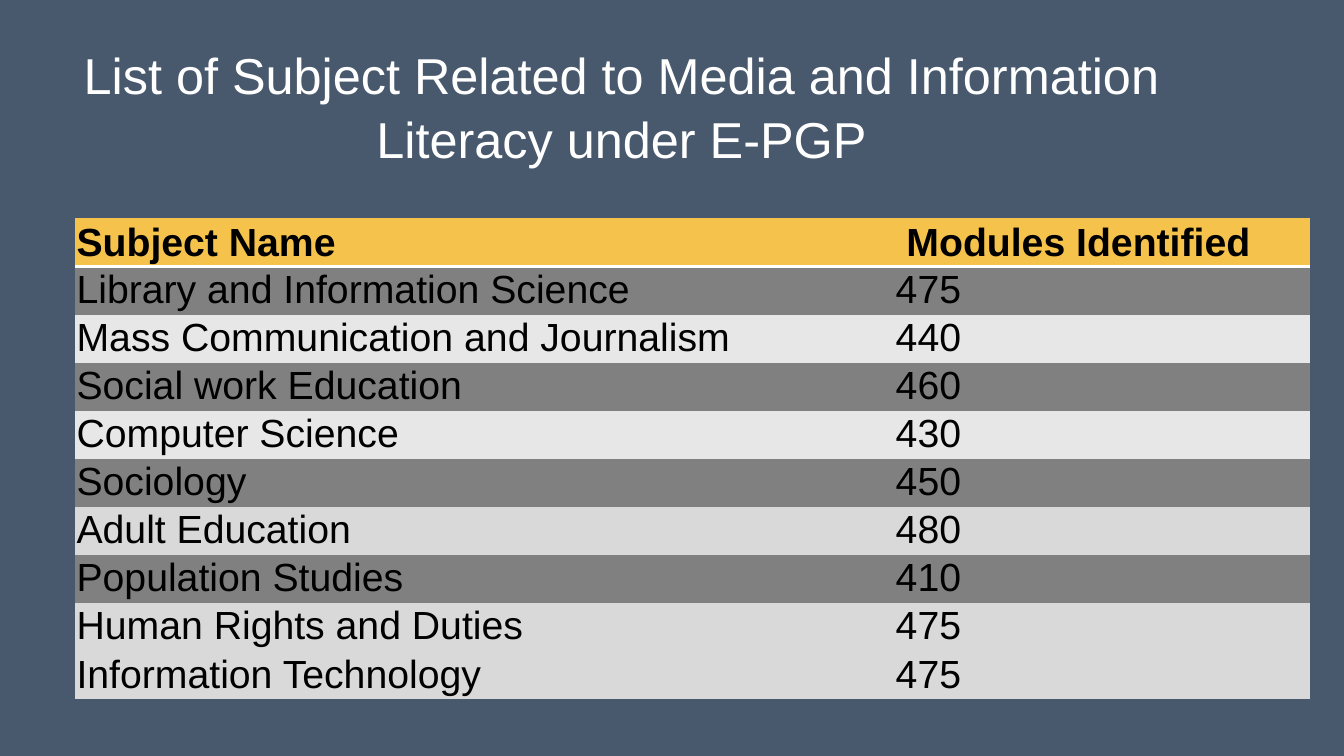
from lxml import etree
from pptx import Presentation
from pptx import util as u
from pptx.dml.color import RGBColor
from pptx.enum import text
from pptx.oxml.ns import qn

SCALE = 4572  # EMU per px, 200 px to the inch
FONT = "Arial"
PLAIN_STYLE = "{2D5ABB26-0587-4C30-8999-92F81FD0307C}"
COLORS = {
    "background": "49596D",
    "white": "FFFFFF",
    "black": "000000",
    "header": "F5C24C",
    "dark": "808080",
    "light": "E7E7E7",
    "silver": "D9D9D9",
}
TITLE = "List of Subject Related to Media and Information Literacy under E-PGP"
HEADER = ("Subject Name", "Modules Identified")
SUBJECTS = [
    ("Library and Information Science", "475", "dark"),
    ("Mass Communication and Journalism", "440", "light"),
    ("Social work Education", "460", "dark"),
    ("Computer Science", "430", "light"),
    ("Sociology", "450", "dark"),
    ("Adult Education", "480", "silver"),
    ("Population Studies", "410", "dark"),
    ("Human Rights and Duties", "475", "silver"),
    ("Information Technology", "475", "silver"),
]


def px(length):
    return u.Emu(length * SCALE)


def color(name):
    return RGBColor.from_string(COLORS[name])


def add_span(para, words, size, color_name, bold=False):
    span = para.add_run()
    span.text = words
    span.font.name = FONT
    span.font.size = u.Pt(size)
    span.font.bold = bold
    span.font.color.rgb = color(color_name)


def add_title(page, left, top, width, height):
    box = page.shapes.add_textbox(px(left), px(top), px(width), px(height))
    box.text_frame.word_wrap = True
    para = box.text_frame.paragraphs[0]
    para.alignment = text.PP_ALIGN.CENTER
    para.line_spacing = 1.05
    add_span(para, TITLE, 27, "white")


def add_bottom_border(cell, color_name, points):
    line = etree.Element(qn("a:lnB"), w=str(u.Pt(points)))
    fill = etree.SubElement(line, qn("a:solidFill"))
    etree.SubElement(fill, qn("a:srgbClr"), val=COLORS[color_name])
    cell._tc.get_or_add_tcPr().insert(0, line)


def fill_cell(cell, words, fill_name, bold=False, indent=2):
    cell.margin_left = px(indent)
    cell.margin_right = cell.margin_top = px(2)
    cell.margin_bottom = 0
    cell.fill.solid()
    cell.fill.fore_color.rgb = color(fill_name)
    add_span(cell.text_frame.paragraphs[0], words, 21, "black", bold)


def add_subject_table(page, left, top, width, height):
    row_count = len(SUBJECTS) + 1
    frame = page.shapes.add_table(
        row_count, 2, px(left), px(top), px(width), px(height))
    table = frame.table
    table._tbl.tblPr.find(qn("a:tableStyleId")).text = PLAIN_STYLE
    name_width = 1219
    table.columns[0].width = px(name_width)
    table.columns[1].width = px(width - name_width)
    for row in table.rows:
        row.height = u.Emu(px(height) // row_count)

    for column, (words, indent) in enumerate(zip(HEADER, (2, 18))):
        cell = table.cell(0, column)
        fill_cell(cell, words, "header", bold=True, indent=indent)
        cell.vertical_anchor = text.MSO_ANCHOR.MIDDLE
        add_bottom_border(cell, "white", 2)
    for row, (subject, modules, fill_name) in enumerate(SUBJECTS, start=1):
        fill_cell(table.cell(row, 0), subject, fill_name)
        fill_cell(table.cell(row, 1), modules, fill_name)


def main():
    deck = Presentation()
    deck.slide_width, deck.slide_height = px(2000), px(1125)
    page = deck.slides.add_slide(deck.slide_layouts[6])
    page.background.fill.solid()
    page.background.fill.fore_color.rgb = color("background")
    add_subject_table(page, 112, 325, 1838, 716)
    add_title(page, 0, 52, 1850, 150)
    deck.save("out.pptx")


if __name__ == "__main__":
    main()
